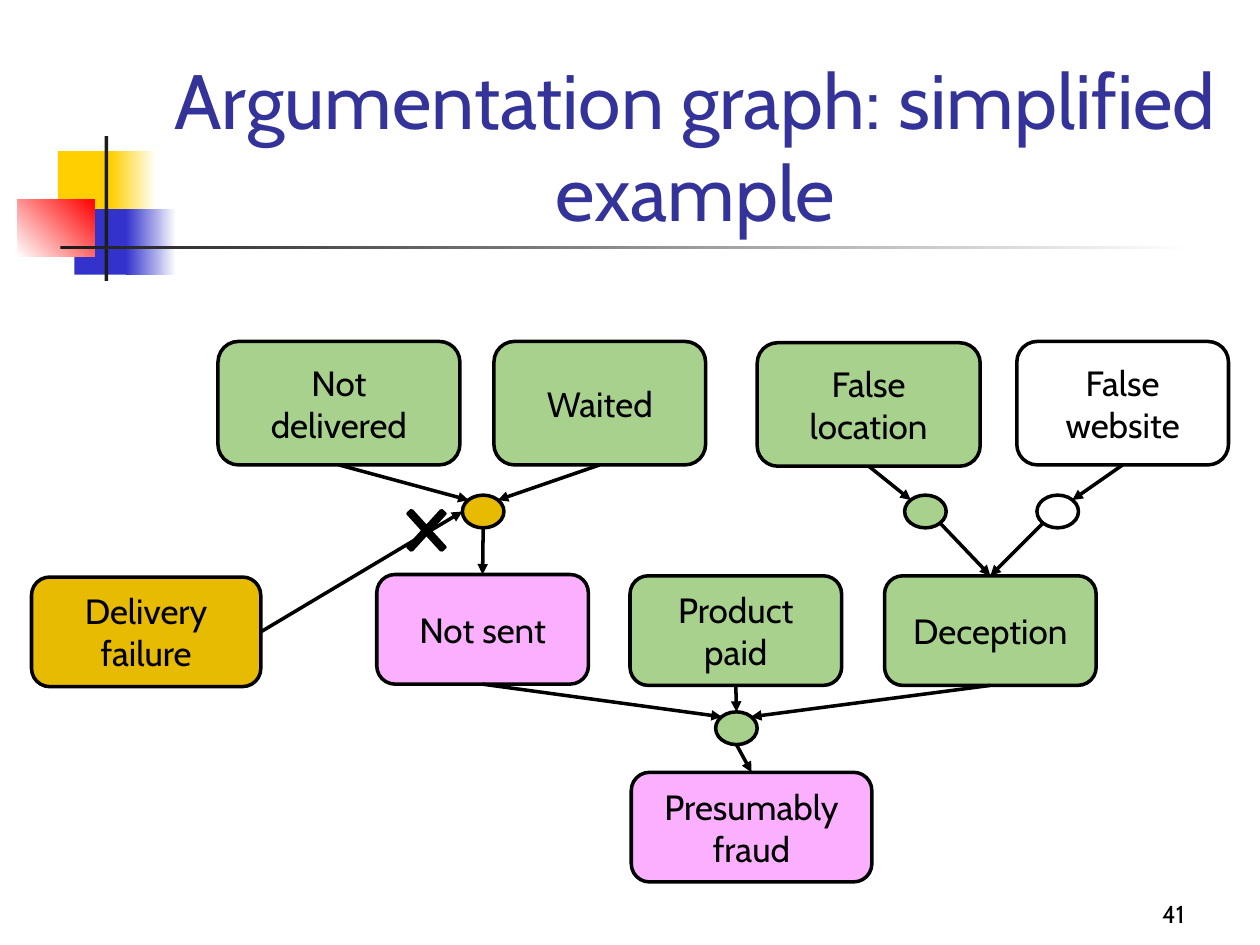
from dataclasses import dataclass

from lxml.etree import SubElement
from pptx import Presentation
from pptx.dml.color import RGBColor
from pptx.enum.shapes import MSO_CONNECTOR, MSO_SHAPE
from pptx.enum.text import MSO_ANCHOR, MSO_AUTO_SIZE, PP_ALIGN
from pptx.oxml.ns import qn
from pptx.util import Inches, Pt


@dataclass(frozen=True)
class Theme:
    """Colours, font and type sizes of the slide."""
    font: str = "Cabin"
    title: str = "333399"
    ink: str = "000000"
    white: str = "FFFFFF"
    accepted: str = "A9D18E"
    claim: str = "FBAFFF"
    exception: str = "E7BB01"
    yellow: str = "FFCF01"
    blue: str = "3333CC"
    red: str = "FF0000"
    charcoal: str = "1C1C1C"
    title_size: int = 44
    node_size: int = 20
    number_size: int = 14
    line_width: int = 2


THEME = Theme()
TOP, LEFT, BOTTOM, RIGHT = (0.5, 0), (0, 0.5), (0.5, 1), (1, 0.5)
TOP_LEFT, TOP_RIGHT = (0.15, 0.15), (0.85, 0.15)
BOTTOM_LEFT, BOTTOM_RIGHT = (0.15, 0.85), (0.85, 0.85)


def rgb(code):
    """Turn a hex code into a colour."""
    return RGBColor.from_string(code)


def write(frame, text, size, color, align, anchor):
    """Fill a text frame with one formatted paragraph."""
    frame.text = text
    frame.word_wrap = True
    frame.auto_size = MSO_AUTO_SIZE.NONE
    frame.vertical_anchor = anchor
    paragraph = frame.paragraphs[0]
    paragraph.alignment = align
    font = paragraph.runs[0].font
    font.name, font.size, font.color.rgb = THEME.font, Pt(size), rgb(color)


def add_figure(slide, preset, box, fill):
    """Add a filled preset shape with the black graph outline."""
    figure = slide.shapes.add_shape(preset, *map(Inches, box))
    figure.shadow.inherit = False
    figure.fill.solid()
    figure.fill.fore_color.rgb = rgb(fill)
    figure.line.color.rgb = rgb(THEME.ink)
    figure.line.width = Pt(THEME.line_width)
    return figure


def add_statement(slide, text, box, fill):
    """Add a rounded box that holds a statement."""
    statement = add_figure(slide, MSO_SHAPE.ROUNDED_RECTANGLE, box, fill)
    frame = statement.text_frame
    write(frame, text, THEME.node_size, THEME.ink, PP_ALIGN.CENTER, MSO_ANCHOR.MIDDLE)
    frame.margin_left = frame.margin_right = Inches(0.14)
    return statement


def add_inference(slide, left, top, fill):
    """Add the small ellipse that joins premises to a conclusion."""
    return add_figure(slide, MSO_SHAPE.OVAL, (left, top, 0.33, 0.26), fill)


def site(figure, spot):
    """Return the point at a fractional spot of a figure."""
    return (int(figure.left + figure.width * spot[0]),
            int(figure.top + figure.height * spot[1]))


def add_arrow(slide, source, source_spot, target, target_spot):
    """Draw an arrow between spots of two figures."""
    arrow = slide.shapes.add_connector(
        MSO_CONNECTOR.STRAIGHT, *site(source, source_spot), *site(target, target_spot))
    arrow.line.color.rgb = rgb(THEME.ink)
    arrow.line.width = Pt(THEME.line_width)
    SubElement(arrow.line._get_or_add_ln(), qn("a:tailEnd"), type="triangle")
    SubElement(arrow._element.spPr, qn("a:effectLst"))


def add_block(slide, box, start, end=None, angle=0):
    """Add a borderless block in one colour or a two-colour gradient."""
    block = slide.shapes.add_shape(MSO_SHAPE.RECTANGLE, *map(Inches, box))
    block.shadow.inherit = False
    block.line.fill.background()
    if end is None:
        block.fill.solid()
        block.fill.fore_color.rgb = rgb(start)
        return
    block.fill.gradient()
    block.fill.gradient_angle = angle
    for stop, color, position in zip(block.fill.gradient_stops, (start, end), (0, 1)):
        stop.color.rgb = rgb(color)
        stop.position = position


def add_ornament(slide):
    """Add the coloured blocks and crossing rules beside the title."""
    add_block(slide, (0.46, 1.2, 0.48, 0.52), THEME.yellow)
    add_block(slide, (0.88, 1.2, 0.36, 0.52), THEME.yellow, THEME.white)
    add_block(slide, (0.59, 1.66, 0.46, 0.52), THEME.blue)
    add_block(slide, (1, 1.66, 0.4, 0.52), THEME.blue, THEME.white)
    add_block(slide, (0.14, 1.58, 0.61, 0.46), THEME.white, THEME.red, 45)
    add_block(slide, (0.83, 1.08, 0.03, 1.15), THEME.charcoal)
    add_block(slide, (0.48, 1.95, 9, 0.03), THEME.charcoal, THEME.white)


def add_title(slide, text):
    """Place and format the slide title."""
    title = slide.shapes.title
    title.left, title.top, title.width, title.height = map(Inches, (1.26, 0.68, 8.52, 1.25))
    write(title.text_frame, text, THEME.title_size, THEME.title,
          PP_ALIGN.CENTER, MSO_ANCHOR.BOTTOM)


def add_page_number(slide, number):
    """Add the page number at the lower right."""
    page = slide.shapes.add_textbox(*map(Inches, (7.42, 6.92, 2.08, 0.5)))
    write(page.text_frame, number, THEME.number_size, THEME.ink,
          PP_ALIGN.RIGHT, MSO_ANCHOR.BOTTOM)


def add_graph(slide):
    """Add statements, inferences and the arrows between them."""
    good, claim, exception = THEME.accepted, THEME.claim, THEME.exception
    undelivered = add_statement(slide, "Not delivered", (1.73, 2.71, 1.92, 0.98), good)
    waited = add_statement(slide, "Waited", (3.92, 2.71, 1.68, 0.98), good)
    location = add_statement(slide, "False location", (6.01, 2.72, 1.77, 0.98), good)
    website = add_statement(slide, "False website", (8.07, 2.71, 1.68, 0.98), THEME.white)
    failure = add_statement(slide, "Delivery failure", (0.25, 4.58, 1.82, 0.87), exception)
    unsent = add_statement(slide, "Not sent", (2.99, 4.56, 1.68, 0.87), claim)
    paid = add_statement(slide, "Product paid", (5, 4.57, 1.68, 0.87), good)
    deception = add_statement(slide, "Deception", (7.02, 4.57, 1.68, 0.87), good)
    fraud = add_statement(slide, "Presumably fraud", (5.01, 6.13, 1.91, 0.87), claim)

    to_unsent = add_inference(slide, 3.67, 3.93, exception)
    from_location = add_inference(slide, 7.18, 3.93, good)
    from_website = add_inference(slide, 8.23, 3.93, THEME.white)
    to_fraud = add_inference(slide, 5.68, 5.65, good)

    for link in (
        (undelivered, BOTTOM, to_unsent, TOP_LEFT),
        (waited, BOTTOM, to_unsent, TOP_RIGHT),
        (failure, RIGHT, to_unsent, LEFT),
        (to_unsent, BOTTOM, unsent, TOP),
        (location, BOTTOM, from_location, TOP_LEFT),
        (from_location, BOTTOM_RIGHT, deception, TOP),
        (website, BOTTOM, from_website, TOP_RIGHT),
        (from_website, BOTTOM_LEFT, deception, TOP),
        (unsent, BOTTOM, to_fraud, TOP_LEFT),
        (paid, BOTTOM, to_fraud, TOP),
        (deception, BOTTOM, to_fraud, TOP_RIGHT),
        (to_fraud, BOTTOM, fraud, TOP),
    ):
        add_arrow(slide, *link)

    defeat = add_figure(slide, MSO_SHAPE.MATH_MULTIPLY, (3.13, 3.93, 0.51, 0.56), THEME.ink)
    defeat.adjustments[0] = 0.072


def main():
    """Build and save the slide."""
    deck = Presentation()
    deck.slide_width, deck.slide_height = Inches(10), Inches(7.5)
    slide = deck.slides.add_slide(deck.slide_layouts[5])
    add_ornament(slide)
    add_title(slide, "Argumentation graph: simplified example")
    add_page_number(slide, "41")
    add_graph(slide)
    deck.save("out.pptx")


if __name__ == "__main__":
    main()
